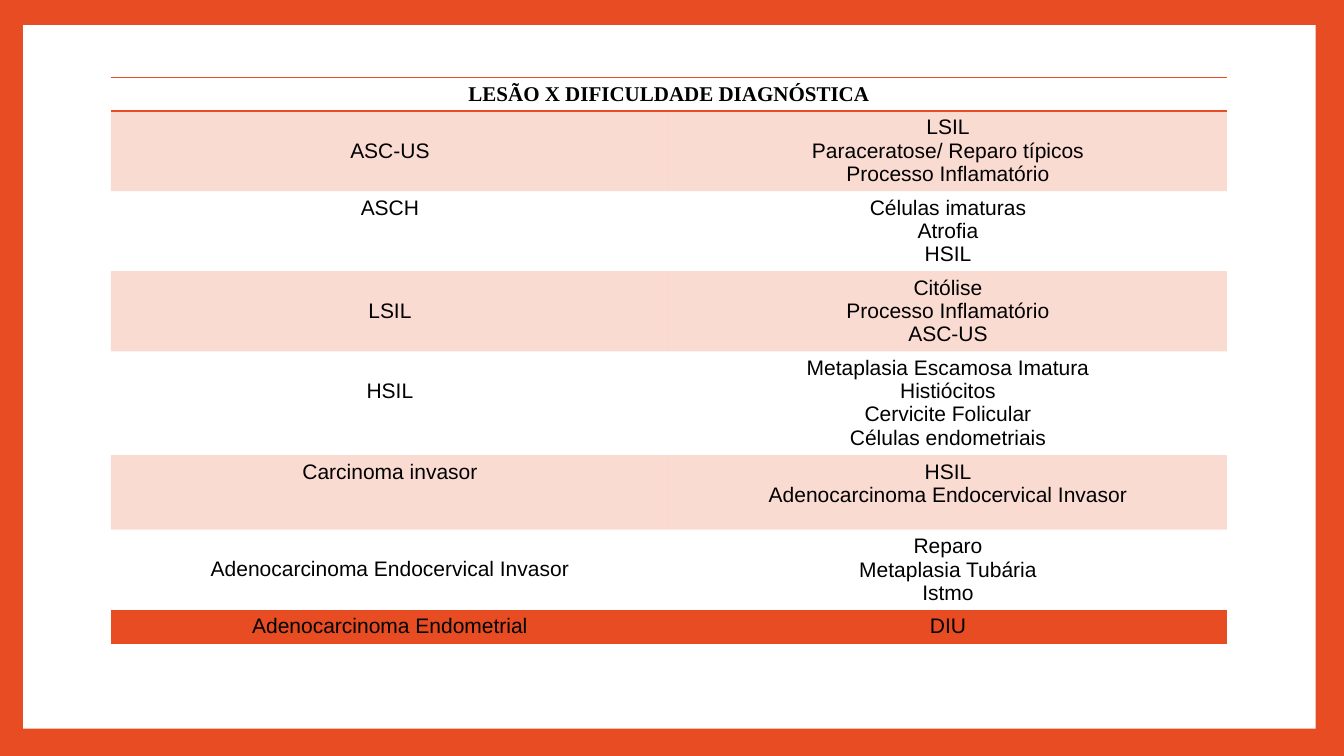
from dataclasses import dataclass

from lxml import etree
from pptx import Presentation
from pptx import util as u
from pptx.dml.color import RGBColor
from pptx.enum import shapes, text
from pptx.oxml.ns import qn


@dataclass(frozen=True)
class Theme:
    accent: str = "E84C22"
    paper: str = "FFFFFF"
    ink: str = "000000"
    band_opacity: int = 20
    size: float = 15
    title_font: str = "Times New Roman"
    body_font: str = "Arial"
    rule: float = 1


THEME = Theme()
WIDTH, HEIGHT = 13.33, 7.5
MARGIN, LINE = 0.05, 0.23  # cell margin and text line height, inches
NO_GRID = "{2D5ABB26-0587-4C30-8999-92F81FD0307C}"

TITLE = "LESÃO X DIFICULDADE DIAGNÓSTICA"
TITLE_ROW = 0.33
# lesion, lines its name is lowered by, look-alikes, row height
LESIONS = [
    ("ASC-US", 1, ["LSIL", "Paraceratose/ Reparo típicos", "Processo Inflamatório"], 0.79),
    ("ASCH", 0, ["Células imaturas", "Atrofia", "HSIL"], 0.79),
    ("LSIL", 1, ["Citólise", "Processo Inflamatório", "ASC-US"], 0.79),
    ("HSIL", 1, ["Metaplasia Escamosa Imatura", "Histiócitos",
                 "Cervicite Folicular", "Células endometriais"], 1.03),
    ("Carcinoma invasor", 0, ["HSIL", "Adenocarcinoma Endocervical Invasor"], 0.74),
    ("Adenocarcinoma Endocervical Invasor", 1,
     ["Reparo", "Metaplasia Tubária", "Istmo"], 0.79),
    ("Adenocarcinoma Endometrial", 0, ["DIU"], 0.33),
]


def add_panel(slide, left, top, width, height, color):
    """Plain rectangle placed by shares of the slide's size."""
    sp = slide.shapes.add_shape(
        shapes.MSO_SHAPE.RECTANGLE, u.Inches(left * WIDTH), u.Inches(top * HEIGHT),
        u.Inches(width * WIDTH), u.Inches(height * HEIGHT))
    sp.shadow.inherit = False
    sp.fill.solid()
    sp.fill.fore_color.rgb = RGBColor.from_string(color)
    sp.line.fill.background()


def write(cell, lines, font=THEME.body_font, bold=False, lowered=0):
    """Centred lines of text, lowered by whole lines."""
    cell.margin_top = u.Inches(MARGIN + lowered * LINE)
    cell.margin_bottom = u.Inches(MARGIN)
    cell.vertical_anchor = text.MSO_ANCHOR.TOP
    tf = cell.text_frame
    for i, line in enumerate(lines):
        p = tf.add_paragraph() if i else tf.paragraphs[0]
        p.alignment = text.PP_ALIGN.CENTER
        r = p.add_run()
        r.text = line
        r.font.name, r.font.size, r.font.bold = font, u.Pt(THEME.size), bold
        r.font.color.rgb = RGBColor.from_string(THEME.ink)


def add_rules(cell, *sides):
    """Accent borders on the given sides, in the order T, B."""
    tc_pr = cell._tc.get_or_add_tcPr()
    for side in sides:
        ln = etree.SubElement(tc_pr, qn(f"a:ln{side}"), w=str(u.Pt(THEME.rule)))
        fill = etree.SubElement(ln, qn("a:solidFill"))
        etree.SubElement(fill, qn("a:srgbClr"), val=THEME.accent)


def shade(cell, banded):
    """Translucent accent fill, or none."""
    if not banded:
        cell.fill.background()
        return
    cell.fill.solid()
    cell.fill.fore_color.rgb = RGBColor.from_string(THEME.accent)
    color = cell._tc.tcPr.find(".//" + qn("a:srgbClr"))
    etree.SubElement(color, qn("a:alpha"), val=str(THEME.band_opacity * 1000))


def add_lesion_table(slide, left, top, width):
    heights = [TITLE_ROW] + [row[-1] for row in LESIONS]
    frame = slide.shapes.add_table(
        len(heights), 2, u.Inches(left * WIDTH), u.Inches(top * HEIGHT),
        u.Inches(width * WIDTH), u.Inches(sum(heights)))
    table = frame.table
    table._tbl.tblPr.find(qn("a:tableStyleId")).text = NO_GRID
    for row, height in zip(table.rows, heights):
        row.height = u.Inches(height)

    # Heading across both columns
    heading = table.cell(0, 0)
    heading.merge(table.cell(0, 1))
    write(heading, [TITLE], font=THEME.title_font, bold=True)
    for cell in table.rows[0].cells:
        add_rules(cell, "T", "B")
        shade(cell, False)

    # Lesions, shaded on every other row
    for i, (lesion, lowered, lookalikes, _) in enumerate(LESIONS, 1):
        name, difficulty = table.rows[i].cells
        write(name, [lesion], lowered=lowered)
        write(difficulty, lookalikes)
        for cell in (name, difficulty):
            if i == len(LESIONS):
                add_rules(cell, "B")
            shade(cell, i % 2 == 1)


def main():
    prs = Presentation()
    prs.slide_width, prs.slide_height = u.Inches(WIDTH), u.Inches(HEIGHT)
    slide = prs.slides.add_slide(prs.slide_layouts[6])

    # Coloured frame around a white sheet
    add_panel(slide, 0, 0, 1, 1, THEME.accent)
    add_panel(slide, 0.23 / WIDTH, 0.25 / HEIGHT, 12.82 / WIDTH, 6.98 / HEIGHT, THEME.paper)

    add_lesion_table(slide, 1.1 / WIDTH, 0.77 / HEIGHT, 11.07 / WIDTH)
    prs.save("out.pptx")


if __name__ == "__main__":
    main()
